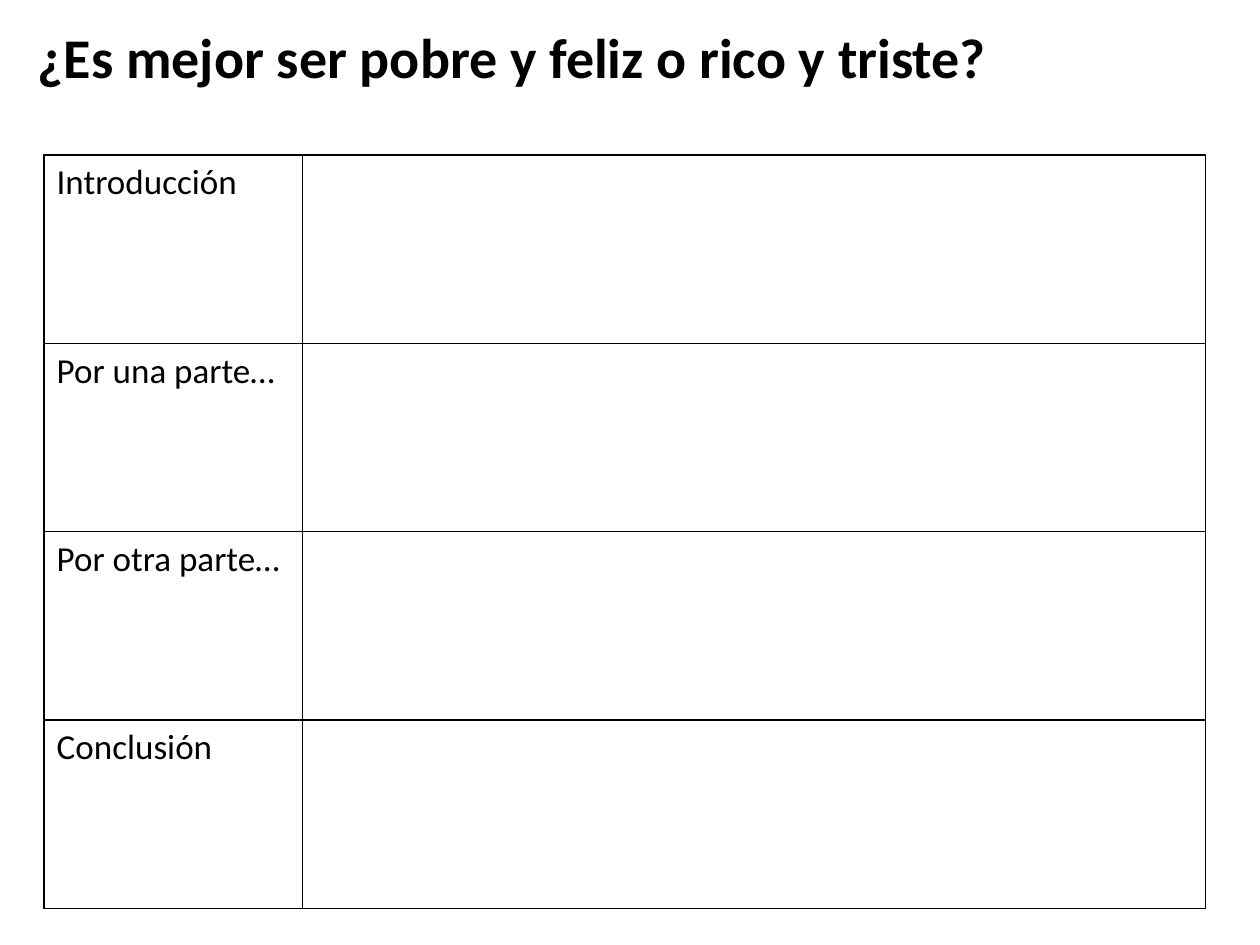
from dataclasses import dataclass

from lxml import etree
from pptx import Presentation
from pptx.dml.color import RGBColor
from pptx.enum.text import MSO_ANCHOR, PP_ALIGN
from pptx.oxml.ns import qn
from pptx.util import Inches, Pt

LEFT, TOP = PP_ALIGN.LEFT, MSO_ANCHOR.TOP
TITLE_ONLY = 5

# Content
TITLE = "¿Es mejor ser pobre y feliz o rico y triste?"
SECTIONS = ["Introducción", "Por una parte…", "Por otra parte…", "Conclusión"]


@dataclass(frozen=True)
class Theme:
    font: str = "Calibri"
    ink: str = "000000"
    paper: str = "FFFFFF"
    title_size: int = 32
    body_size: int = 20
    border: int = 1


THEME = Theme()

# Layout, in inches
SLIDE_W, SLIDE_H = 10, 7.5
TITLE_BOX = (0.2, 0.13, 9.13, 0.64)
TABLE_X, TABLE_Y, TABLE_W, TABLE_H = 0.35, 1.23, 9.22, 5.98
LABEL_W = 2.05


def write(tf, text, size=THEME.body_size, bold=False):
    p = tf.paragraphs[0]
    p.alignment = LEFT
    r = p.add_run()
    r.text = text
    r.font.name = THEME.font
    r.font.size = Pt(size)
    r.font.bold = bold
    r.font.color.rgb = RGBColor.from_string(THEME.ink)


def style_cell(cell):
    cell.fill.solid()
    cell.fill.fore_color.rgb = RGBColor.from_string(THEME.paper)
    tc_pr = cell._tc.get_or_add_tcPr()
    # Border lines come before the fill in the cell properties
    for i, side in enumerate(("a:lnL", "a:lnR", "a:lnT", "a:lnB")):
        ln = etree.Element(qn(side), w=str(Pt(THEME.border)))
        fill = etree.SubElement(ln, qn("a:solidFill"))
        etree.SubElement(fill, qn("a:srgbClr"), val=THEME.ink)
        tc_pr.insert(i, ln)


def add_title(s):
    sp = s.shapes.title
    sp.left, sp.top, sp.width, sp.height = map(Inches, TITLE_BOX)
    tf = sp.text_frame
    tf.word_wrap = True
    tf.vertical_anchor = TOP
    write(tf, TITLE, size=THEME.title_size, bold=True)


def add_outline_table(s):
    box = map(Inches, (TABLE_X, TABLE_Y, TABLE_W, TABLE_H))
    table = s.shapes.add_table(len(SECTIONS), 2, *box).table
    table.first_row = table.horz_banding = False
    for col, width in zip(table.columns, (LABEL_W, TABLE_W - LABEL_W)):
        col.width = Inches(width)
    for row, label in zip(table.rows, SECTIONS):
        row.height = Inches(TABLE_H / len(SECTIONS))
        write(row.cells[0].text_frame, label)
        for cell in row.cells:
            style_cell(cell)


def main():
    prs = Presentation()
    prs.slide_width, prs.slide_height = Inches(SLIDE_W), Inches(SLIDE_H)
    s = prs.slides.add_slide(prs.slide_layouts[TITLE_ONLY])
    add_title(s)
    add_outline_table(s)
    prs.save("out.pptx")


if __name__ == "__main__":
    main()
